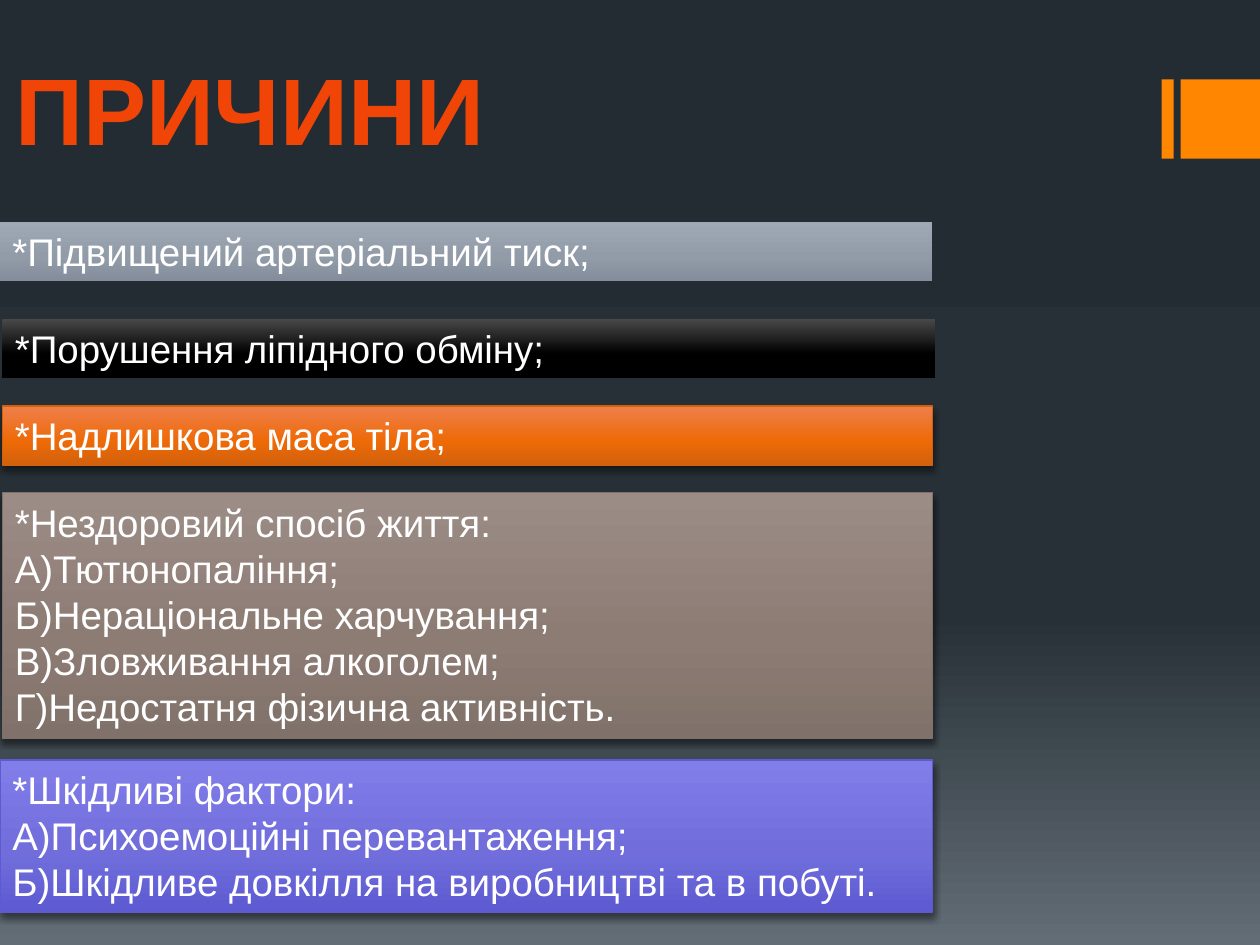
import dataclasses

import lxml.etree
import pptx
import pptx.dml.color
import pptx.enum.shapes
import pptx.enum.text
import pptx.oxml.ns
import pptx.util

Cm = pptx.util.Cm
Pt = pptx.util.Pt
qn = pptx.oxml.ns.qn


@dataclasses.dataclass(frozen=True)
class Theme:
    font: str = "Arial"
    title_size: int = 54
    body_size: int = 22
    title: str = "F04507"
    text: str = "FFFFFF"
    accent: str = "FF8600"
    background: tuple = ((0, "242C33"), (65, "273037"), (100, "636D76"))
    steel: tuple = ((0, "9FA9B6"), (60, "929BA8"), (100, "838D9B"))
    black: tuple = ((0, "484848"), (60, "000000"), (100, "000000"))
    orange: tuple = ((0, "EE7F4C"), (60, "EE6A07"), (100, "D2610C"))
    brown: tuple = ((0, "9B8C86"), (60, "8D7C74"), (100, "80716A"))
    violet: tuple = ((0, "817EEA"), (60, "716EDC"), (100, "5D5AD2"))


THEME = Theme()

# Left, top and width in cm, gradient, raised with edge and shadow, lines
CAUSES = (
    (0, 4.47, 18.8, THEME.steel, False, ("*Підвищений артеріальний тиск;",)),
    (0.05, 6.43, 18.8, THEME.black, False, ("*Порушення ліпідного обміну;",)),
    (0.05, 8.18, 18.75, THEME.orange, True, ("*Надлишкова маса тіла;",)),
    (0.05, 9.93, 18.75, THEME.brown, True, (
        "*Нездоровий спосіб життя:",
        "А)Тютюнопаління;",
        "Б)Нераціональне харчування;",
        "В)Зловживання алкоголем;",
        "Г)Недостатня фізична активність.",
    )),
    (0, 15.32, 18.8, THEME.violet, True, (
        "*Шкідливі фактори:",
        "А)Психоемоційні перевантаження;",
        "Б)Шкідливе довкілля на виробництві та в побуті.",
    )),
)
LINE_HEIGHT = 0.94
BOX_PADDING = 0.25


def color(value):
    return pptx.dml.color.RGBColor.from_string(value)


def fill_gradient(fill, element, stops):
    """Fill from top to bottom with any number of stops."""
    fill.gradient()
    fill.gradient_angle = 270
    stop_list = element.find(".//" + qn("a:gsLst"))
    for old_stop in list(stop_list):
        stop_list.remove(old_stop)
    for percent, value in stops:
        stop = lxml.etree.SubElement(stop_list, qn("a:gs"), pos=str(percent * 1000))
        lxml.etree.SubElement(stop, qn("a:srgbClr"), val=value)


def add_shadow(box):
    effects = box.element.find(".//" + qn("a:effectLst"))
    shadow = lxml.etree.SubElement(
        effects, qn("a:outerShdw"), blurRad=str(Pt(3.8)), dist=str(Pt(3)),
        dir="5400000", rotWithShape="0")
    black = lxml.etree.SubElement(shadow, qn("a:srgbClr"), val="000000")
    lxml.etree.SubElement(black, qn("a:alpha"), val="48000")


def add_rectangle(page, left, top, width, height):
    box = page.shapes.add_shape(
        pptx.enum.shapes.MSO_SHAPE.RECTANGLE,
        Cm(left), Cm(top), Cm(width), Cm(height))
    box.line.fill.background()
    box.shadow.inherit = False
    return box


def write_lines(box, lines, size, value, align, bold=False):
    frame = box.text_frame
    frame.vertical_anchor = pptx.enum.text.MSO_ANCHOR.TOP
    frame.auto_size = pptx.enum.text.MSO_AUTO_SIZE.SHAPE_TO_FIT_TEXT
    for index, line in enumerate(lines):
        para = frame.add_paragraph() if index else frame.paragraphs[0]
        para.text = line
        para.alignment = align
        para.font.name = THEME.font
        para.font.size = Pt(size)
        para.font.bold = bold
        para.font.color.rgb = color(value)


def add_accent(page, left, width):
    box = add_rectangle(page, left, 1.6, width, 1.6)
    box.fill.solid()
    box.fill.fore_color.rgb = color(THEME.accent)


def add_title(page, text):
    box = page.shapes.add_textbox(Cm(0), Cm(0.91), Cm(10.08), Cm(2.57))
    box.text_frame.word_wrap = False
    write_lines(box, [text], THEME.title_size, THEME.title,
                pptx.enum.text.PP_ALIGN.CENTER, bold=True)


def add_cause(page, left, top, width, stops, raised, lines):
    height = BOX_PADDING + LINE_HEIGHT * len(lines)
    box = add_rectangle(page, left, top, width, height)
    fill_gradient(box.fill, box.element, stops)
    if raised:
        box.line.color.rgb = color(stops[-1][1])
        box.line.width = Pt(1)
        add_shadow(box)
    box.text_frame.word_wrap = True
    write_lines(box, lines, THEME.body_size, THEME.text,
                pptx.enum.text.PP_ALIGN.LEFT)


def main():
    deck = pptx.Presentation()
    deck.slide_width, deck.slide_height = Cm(25.4), Cm(19.05)
    page = deck.slides.add_slide(deck.slide_layouts[6])

    # Background and corner accents
    fill_gradient(page.background.fill, page.element, THEME.background)
    add_accent(page, 23.42, 0.24)
    add_accent(page, 23.8, 1.6)

    # Heading and causes
    add_title(page, "ПРИЧИНИ")
    for cause in CAUSES:
        add_cause(page, *cause)

    deck.save("out.pptx")


if __name__ == "__main__":
    main()
